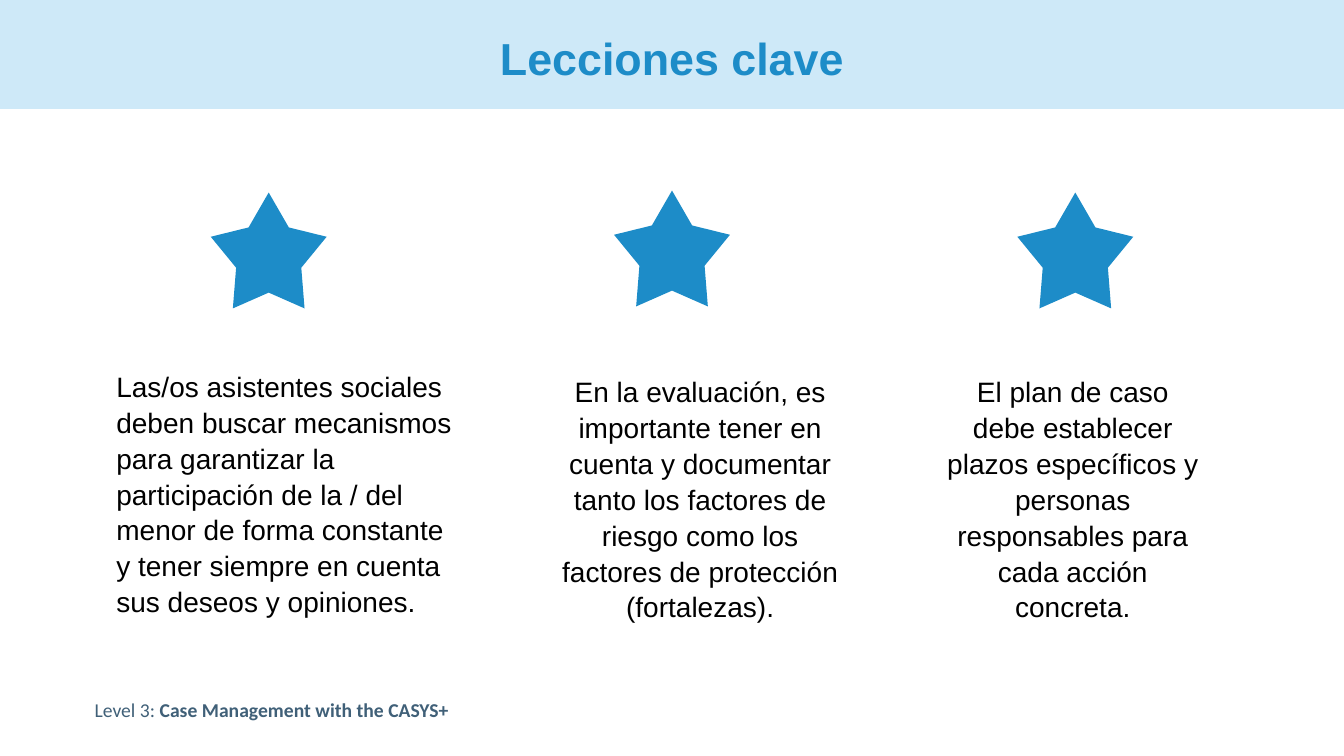
from collections import namedtuple
from dataclasses import dataclass

from pptx import Presentation
from pptx.dml.color import RGBColor
from pptx.enum.shapes import MSO_SHAPE
from pptx.enum.text import MSO_ANCHOR, MSO_AUTO_SIZE, PP_ALIGN
from pptx.util import Inches, Pt

RECT, STAR = MSO_SHAPE.RECTANGLE, MSO_SHAPE.STAR_5_POINT
LEFT, CENTER = PP_ALIGN.LEFT, PP_ALIGN.CENTER
TOP, MIDDLE = MSO_ANCHOR.TOP, MSO_ANCHOR.MIDDLE
FIT, FIXED = MSO_AUTO_SIZE.SHAPE_TO_FIT_TEXT, MSO_AUTO_SIZE.NONE

Box = namedtuple("Box", "x y w h")
Lesson = namedtuple("Lesson", "text align star_y text_box space_after")


@dataclass(frozen=True)
class Theme:
    band: str = "CEE9F8"
    accent: str = "1D8CC8"
    body: str = "000000"
    footer: str = "406078"
    font: str = "Arial"
    footer_font: str = "Calibri"
    title_size: int = 32
    body_size: int = 20
    footer_size: int = 14


THEME = Theme()
SLIDE_W, SLIDE_H = 13.33, 7.5
COLUMN_W = 4
STAR_SIZE = 1.15

# Star and text positions are relative to each lesson's column
LESSONS = [
    Lesson("Las/os asistentes sociales deben buscar mecanismos para garantizar "
           "la participación de la / del menor de forma constante y tener "
           "siempre en cuenta sus deseos y opiniones.",
           LEFT, 0.02, Box(0.39, 1.7, 3.55, 2.73), 8),
    Lesson("En la evaluación, es importante tener en cuenta y documentar tanto "
           "los factores de riesgo como los factores de protección "
           "(fortalezas).",
           CENTER, 0, Box(0.8, 1.75, 2.96, 2.62), 0),
    Lesson("El plan de caso debe establecer plazos específicos y personas "
           "responsables para cada acción concreta.",
           CENTER, 0.02, Box(0.62, 1.75, 2.71, 2.62), 0),
]


def add_solid(s, kind, box, color):
    sp = s.shapes.add_shape(kind, *map(Inches, box))
    sp.shadow.inherit = False
    sp.fill.solid()
    sp.fill.fore_color.rgb = RGBColor.from_string(color)
    sp.line.fill.background()
    return sp


def add_text(s, box, runs, font, size, color, align=LEFT, anchor=TOP,
             fit=FIT, spacing=1.0, space_after=0):
    """Place one paragraph; runs is a list of (text, bold)."""
    tf = s.shapes.add_textbox(*map(Inches, box)).text_frame
    tf.word_wrap = True
    tf.auto_size = fit
    tf.vertical_anchor = anchor
    p = tf.paragraphs[0]
    p.alignment = align
    p.line_spacing = spacing
    p.space_after = Pt(space_after)
    for text, bold in runs:
        r = p.add_run()
        r.text = text
        r.font.name = font
        r.font.size = Pt(size)
        r.font.bold = bold
        r.font.color.rgb = RGBColor.from_string(color)


def add_header(s, box, title):
    add_solid(s, RECT, box, THEME.band)
    margin, top = 0.92, 0.13
    title_box = Box(box.x + margin, box.y + top,
                    box.w - 2 * margin, box.h - top)
    add_text(s, title_box, [(title, True)], THEME.font, THEME.title_size,
             THEME.accent, CENTER, MIDDLE, FIXED, 0.9)


def add_lesson(s, box, lesson):
    star = add_solid(s, STAR, Box(box.x + (box.w - STAR_SIZE) / 2,
                                  box.y + lesson.star_y,
                                  STAR_SIZE, STAR_SIZE), THEME.accent)
    star.adjustments[0] = 0.281
    t = lesson.text_box
    add_text(s, Box(box.x + t.x, box.y + t.y, t.w, t.h),
             [(lesson.text, False)], THEME.font, THEME.body_size, THEME.body,
             lesson.align, spacing=1.07, space_after=lesson.space_after)


def add_lessons(s, box):
    for i, lesson in enumerate(LESSONS):
        add_lesson(s, Box(box.x + i * COLUMN_W, box.y, COLUMN_W, box.h), lesson)


def add_footer(s, box):
    add_text(s, box, [("Level 3: ", False),
                      ("Case Management with the CASYS+", True)],
             THEME.footer_font, THEME.footer_size, THEME.footer)


def main():
    prs = Presentation()
    prs.slide_width, prs.slide_height = Inches(SLIDE_W), Inches(SLIDE_H)
    s = prs.slides.add_slide(prs.slide_layouts[6])

    # Title band, three lessons, footer
    add_header(s, Box(0, 0, SLIDE_W, 1.08), "Lecciones clave")
    lessons_w = COLUMN_W * len(LESSONS)
    add_lessons(s, Box((SLIDE_W - lessons_w) / 2, 1.89, lessons_w, 4.43))
    add_footer(s, Box(0.84, 6.87, 4.55, 0.34))

    prs.save("out.pptx")


if __name__ == "__main__":
    main()
